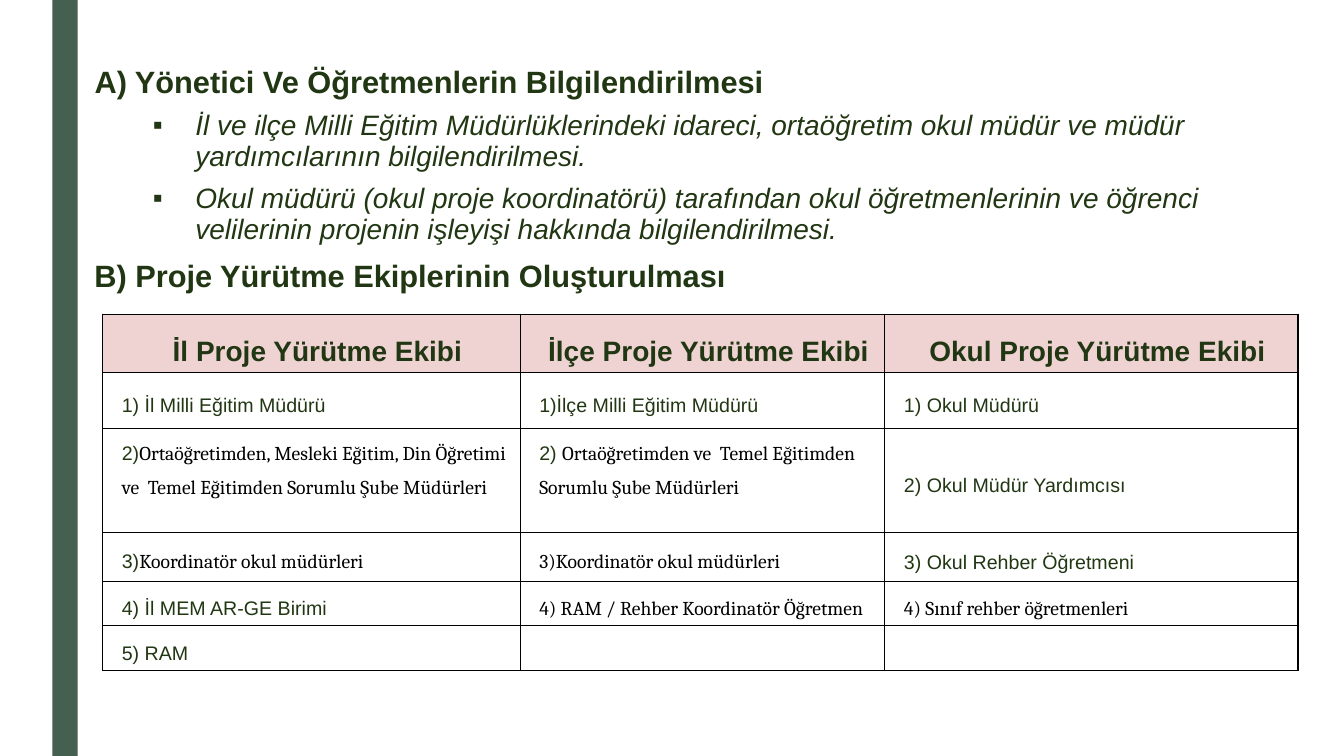
from dataclasses import dataclass

from lxml import etree
from pptx import Presentation
from pptx.dml.color import RGBColor
from pptx.enum.shapes import MSO_SHAPE
from pptx.enum.text import MSO_ANCHOR, MSO_AUTO_SIZE, PP_ALIGN
from pptx.oxml.ns import qn
from pptx.util import Cm, Pt

RECT = MSO_SHAPE.RECTANGLE
TOP, MIDDLE = MSO_ANCHOR.TOP, MSO_ANCHOR.MIDDLE
LEFT, CENTER = PP_ALIGN.LEFT, PP_ALIGN.CENTER
NO_FIT = MSO_AUTO_SIZE.NONE


@dataclass(frozen=True)
class Theme:
    bar: RGBColor = RGBColor(0x45, 0x5F, 0x51)
    text: RGBColor = RGBColor(0x21, 0x36, 0x12)
    black: RGBColor = RGBColor(0, 0, 0)
    header: RGBColor = RGBColor(0xEF, 0xD3, 0xD2)
    sans: str = "Arial"
    serif: str = "Cambria"
    heading: int = 22
    body: int = 20
    cell: int = 14


T = Theme()
HEADING = dict(name=T.sans, size=Pt(T.heading), bold=True, italic=False)
BULLET = dict(name=T.sans, size=Pt(T.body), bold=False, italic=True)
COLUMN_HEAD = dict(name=T.sans, size=Pt(T.body), bold=True)
CELL_SANS = dict(name=T.sans, size=Pt(T.cell), bold=False)
CELL_SERIF = dict(name=T.serif, size=Pt(T.cell), bold=False)

INFORMING = "A) Yönetici Ve Öğretmenlerin Bilgilendirilmesi"
INFORMING_STEPS = [
    "İl ve ilçe Milli Eğitim Müdürlüklerindeki idareci, ortaöğretim okul müdür "
    "ve müdür yardımcılarının bilgilendirilmesi.",
    "Okul müdürü (okul proje koordinatörü) tarafından okul öğretmenlerinin ve "
    "öğrenci velilerinin projenin işleyişi hakkında bilgilendirilmesi.",
]
TEAMS_HEADING = "B) Proje Yürütme Ekiplerinin Oluşturulması"

# Text after "|" is set in the serif font
TEAMS = [
    ["İl Proje Yürütme Ekibi", "İlçe Proje Yürütme Ekibi", "Okul Proje Yürütme Ekibi"],
    ["1) İl Milli Eğitim Müdürü", "1)İlçe Milli Eğitim Müdürü", "1) Okul Müdürü"],
    ["2)|Ortaöğretimden, Mesleki Eğitim, Din Öğretimi  ve  Temel Eğitimden "
     "Sorumlu Şube Müdürleri",
     "2) |Ortaöğretimden ve  Temel Eğitimden Sorumlu Şube Müdürleri",
     "2) Okul Müdür Yardımcısı"],
    ["3)|Koordinatör okul müdürleri", "|3)Koordinatör okul müdürleri",
     "3) Okul Rehber Öğretmeni"],
    ["4) İl MEM AR-GE Birimi", "|4) RAM / Rehber Koordinatör Öğretmen",
     "|4) Sınıf rehber öğretmenleri"],
    ["5) RAM", "", ""],
]
COLUMNS = [10.52, 9.19, 10.41]
ROWS = [1.47, 1.4, 2.62, 1.24, 1.12, 1.12]


def add_run(p, text, style, color=T.text):
    r = p.add_run()
    r.text = text
    for key, value in style.items():
        setattr(r.font, key, value)
    r.font.color.rgb = color


def set_indent(p, left, first=0.0, bullet=None):
    pPr = p._p.get_or_add_pPr()
    pPr.set("marL", str(Cm(left)))
    pPr.set("indent", str(Cm(first)))
    if bullet:
        clr = etree.SubElement(pPr, qn("a:buClr"))
        etree.SubElement(clr, qn("a:srgbClr"), val=str(T.text))
        etree.SubElement(pPr, qn("a:buFont"), typeface=T.sans)
        etree.SubElement(pPr, qn("a:buChar"), char=bullet)
    else:
        etree.SubElement(pPr, qn("a:buNone"))


def place(sp, box):
    sp.left, sp.top, sp.width, sp.height = (Cm(v) for v in box)


def add_side_bar(slide, box):
    sp = slide.shapes.add_shape(RECT, *(Cm(v) for v in box))
    sp.shadow.inherit = False
    sp.fill.solid()
    sp.fill.fore_color.rgb = T.bar
    sp.line.fill.background()


def fill_informing(sp, box):
    place(sp, box)
    tf = sp.text_frame
    tf.auto_size, tf.vertical_anchor = NO_FIT, TOP
    for i, text in enumerate([INFORMING] + INFORMING_STEPS):
        p = tf.add_paragraph() if i else tf.paragraphs[0]
        p.line_spacing = 0.94
        p.space_before = Pt(7 if i else 0)
        if i:
            p.level = 1
            set_indent(p, 2.54, -1.07, "▪")
        else:
            set_indent(p, 0)
        add_run(p, text, BULLET if i else HEADING)


def add_heading(slide, box, text):
    tf = slide.shapes.add_textbox(*(Cm(v) for v in box)).text_frame
    tf.word_wrap = True
    add_run(tf.paragraphs[0], text, HEADING)


def set_borders(cell):
    tcPr = cell._tc.get_or_add_tcPr()
    for side in ("lnL", "lnR", "lnT", "lnB"):
        ln = etree.SubElement(tcPr, qn("a:" + side), w=str(Pt(1)))
        fill = etree.SubElement(ln, qn("a:solidFill"))
        etree.SubElement(fill, qn("a:srgbClr"), val=str(T.black))


def fill_cell(cell, text, is_head, is_tall):
    set_borders(cell)
    if is_head:
        cell.fill.solid()
        cell.fill.fore_color.rgb = T.header
    else:
        cell.fill.background()
    layout = dict(margin_left=Cm(0.18), margin_right=Cm(0.18), margin_bottom=0,
                  margin_top=Cm(0.08) if is_tall else 0,
                  vertical_anchor=TOP if is_tall else MIDDLE)
    for key, value in layout.items():
        setattr(cell, key, value)
    if not text:
        return
    p = cell.text_frame.paragraphs[0]
    p.alignment = CENTER if is_head else LEFT
    p.line_spacing = 1.5
    set_indent(p, 0.3)
    sans, _, serif = text.partition("|")
    if sans:
        add_run(p, sans, COLUMN_HEAD if is_head else CELL_SANS)
    if serif:
        add_run(p, serif, CELL_SERIF, T.black)


def add_teams_table(slide, left, top):
    frame = slide.shapes.add_table(len(ROWS), len(COLUMNS), Cm(left), Cm(top),
                                   Cm(sum(COLUMNS)), Cm(sum(ROWS)))
    table = frame.table
    table.horz_banding = False
    for column, width in zip(table.columns, COLUMNS):
        column.width = Cm(width)
    for i, (row, height, texts) in enumerate(zip(table.rows, ROWS, TEAMS)):
        row.height = Cm(height)
        for cell, text in zip(row.cells, texts):
            # Two-line entries start at the top of their row
            fill_cell(cell, text, i == 0, len(text) > 50)


def build_teams_slide(prs):
    slide = prs.slides.add_slide(prs.slide_layouts[1])
    title, body = slide.placeholders
    title._element.getparent().remove(title._element)
    add_side_bar(slide, (1.32, 0, 0.64, 19.05))
    fill_informing(body, (2.13, 1.52, 30.58, 4.83))
    add_teams_table(slide, 2.59, 7.92)
    add_heading(slide, (2.13, 6.35, 30.58, 1.19), TEAMS_HEADING)


def main():
    prs = Presentation()
    prs.slide_width, prs.slide_height = Cm(33.87), Cm(19.05)
    build_teams_slide(prs)
    prs.save("out.pptx")


if __name__ == "__main__":
    main()
